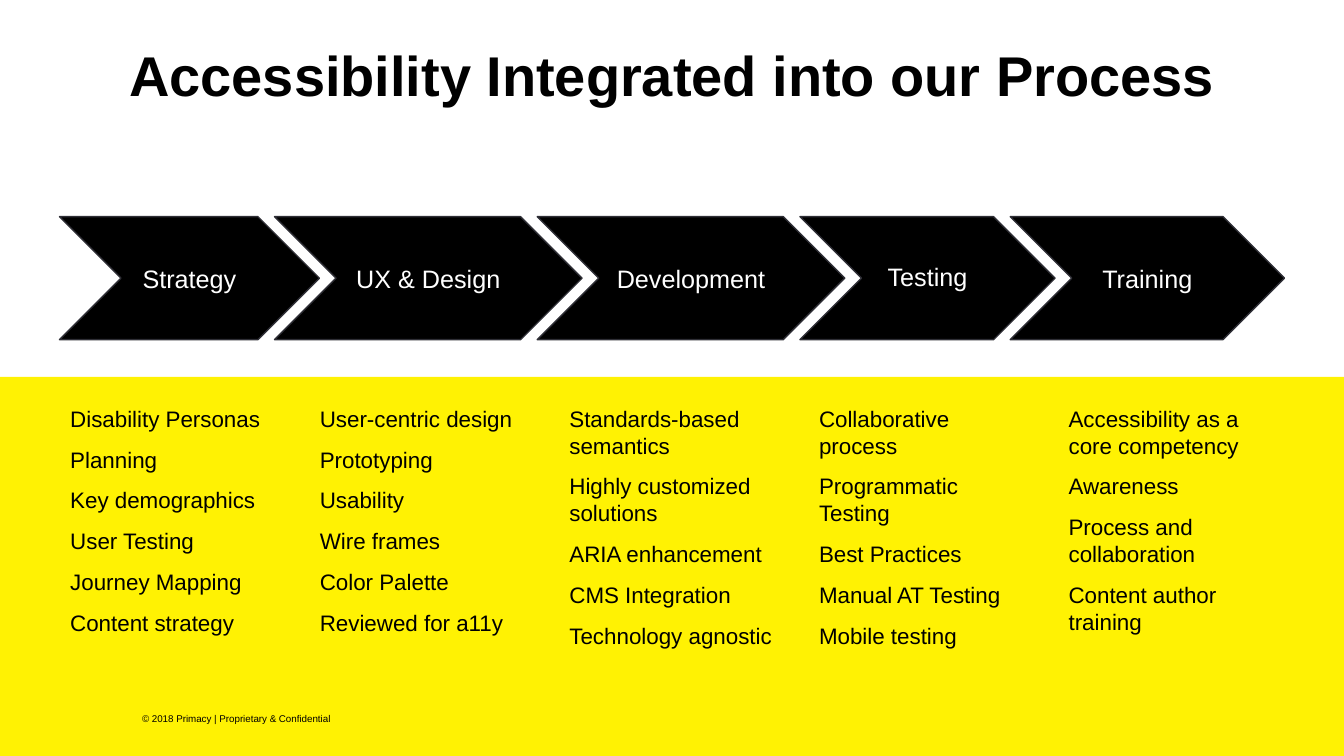
from dataclasses import dataclass

from lxml.etree import SubElement
from pptx import Presentation
from pptx.dml.color import RGBColor
from pptx.enum.shapes import MSO_SHAPE as Preset
from pptx.enum.text import MSO_ANCHOR as Anchor, MSO_AUTO_SIZE as AutoSize, PP_ALIGN as Align
from pptx.oxml.ns import qn
from pptx.util import Cm, Pt

TITLE = "Accessibility Integrated into our Process"
COPYRIGHT = "© 2018 Primacy | Proprietary & Confidential"

# stage, chevron width in cm, line spacing of its label, activities
STAGES = [
    ("Strategy", 6.55, 1, ["Disability Personas", "Planning", "Key demographics",
                           "User Testing", "Journey Mapping", "Content strategy"]),
    ("UX & Design", 7.75, 1, ["User-centric design", "Prototyping", "Usability",
                              "Wire frames", "Color Palette", "Reviewed for a11y"]),
    ("Development", 7.75, 1, ["Standards-based semantics", "Highly customized solutions",
                              "ARIA enhancement", "CMS Integration", "Technology agnostic"]),
    ("Testing", 6.43, 0.9, ["Collaborative process", "Programmatic Testing", "Best Practices",
                            "Manual AT Testing", "Mobile testing"]),
    ("Training", 6.91, 1, ["Accessibility as a core competency", "Awareness",
                           "Process and collaboration", "Content author training"]),
]


@dataclass(frozen=True)
class Theme:
    font: str = "Arial"
    black: RGBColor = RGBColor(0, 0, 0)
    white: RGBColor = RGBColor(255, 255, 255)
    yellow: RGBColor = RGBColor(0xFF, 0xF2, 0x03)
    outline: RGBColor = RGBColor(0x2E, 0x2E, 0x35)
    title_size: int = 40
    stage_size: int = 18
    list_size: int = 16
    copyright_size: int = 7


THEME = Theme()

SLIDE_W, SLIDE_H = 33.87, 19.05
BAND_TOP = 9.5
CHEVRON_LEFT, CHEVRON_TOP, CHEVRON_H, CHEVRON_OVERLAP = 1.5, 5.46, 3.1, 1.13
LIST_LEFT, LIST_TOP, LIST_W, LIST_H, LIST_STEP = 1.52, 10.07, 5.72, 6.9, 6.29


def place(shape, left, top, width, height):
    shape.left, shape.top, shape.width, shape.height = map(Cm, (left, top, width, height))


def write(shape, lines, *, size, color=THEME.black, bold=False, align=Align.LEFT,
          anchor=Anchor.TOP, margins=(0, 0), gap=0, line_spacing=1):
    """Fill a shape with one unbulleted paragraph per line; margins are (x, y) in cm."""
    frame = shape.text_frame
    frame.word_wrap, frame.auto_size, frame.vertical_anchor = True, AutoSize.NONE, anchor
    frame.margin_left = frame.margin_right = Cm(margins[0])
    frame.margin_top = frame.margin_bottom = Cm(margins[1])
    for index, line in enumerate(lines):
        paragraph = frame.add_paragraph() if index else frame.paragraphs[0]
        paragraph.text = line
        paragraph.alignment, paragraph.line_spacing = align, line_spacing
        paragraph.space_before = Pt(gap if index else 0)
        properties = paragraph._p.get_or_add_pPr()
        properties.set("marL", "0")
        properties.set("indent", "0")
        SubElement(properties, qn("a:buNone"))
        font = paragraph.font
        font.name, font.size, font.bold = THEME.font, Pt(size), bold
        font.color.rgb = color


def add_filled(slide, preset, bounds, fill, outline=None):
    shape = slide.shapes.add_shape(preset, *map(Cm, bounds))
    shape.shadow.inherit = False
    shape.fill.solid()
    shape.fill.fore_color.rgb = fill
    if outline is None:
        shape.line.fill.background()
    else:
        shape.line.color.rgb, shape.line.width = outline, Pt(1)
    return shape


def add_list_placeholders(slide, count):
    """Return the layout's body placeholder, cloned until there is one per stage."""
    first = slide.placeholders[1]
    layout_body = slide.slide_layout.placeholders[1]
    bodies = [first]
    while len(bodies) < count:
        slide.shapes.clone_placeholder(layout_body)
        bodies.append(slide.shapes[-1])
    return bodies


def main():
    deck = Presentation()
    deck.slide_width, deck.slide_height = Cm(SLIDE_W), Cm(SLIDE_H)
    slide = deck.slides.add_slide(deck.slide_layouts[1])

    band = add_filled(slide, Preset.RECTANGLE,
                      (0, BAND_TOP, SLIDE_W, SLIDE_H - BAND_TOP), THEME.yellow)
    slide.shapes._spTree.insert(2, band._element)  # behind the placeholders

    title = slide.shapes.title
    place(title, 1.52, 1.02, 30.81, 1.7)
    write(title, [TITLE], size=THEME.title_size, bold=True, align=Align.CENTER)

    copyright_line = slide.shapes.add_textbox(Cm(3.58), Cm(17.96), Cm(7.6), Cm(0.3))
    write(copyright_line, [COPYRIGHT], size=THEME.copyright_size)

    chevron_left = CHEVRON_LEFT
    bodies = add_list_placeholders(slide, len(STAGES))
    for column, (body, stage) in enumerate(zip(bodies, STAGES)):
        name, chevron_w, label_spacing, activities = stage
        chevron = add_filled(slide, Preset.CHEVRON,
                             (chevron_left, CHEVRON_TOP, chevron_w, CHEVRON_H),
                             THEME.black, THEME.outline)
        write(chevron, [name], size=THEME.stage_size, color=THEME.white, align=Align.CENTER,
              anchor=Anchor.MIDDLE, margins=(0.25, 0.25), line_spacing=label_spacing)
        chevron_left += chevron_w - CHEVRON_OVERLAP

        place(body, LIST_LEFT + column * LIST_STEP, LIST_TOP, LIST_W, LIST_H)
        write(body, activities, size=THEME.list_size, margins=(0.25, 0.13), gap=10)

    deck.save("out.pptx")


if __name__ == "__main__":
    main()
